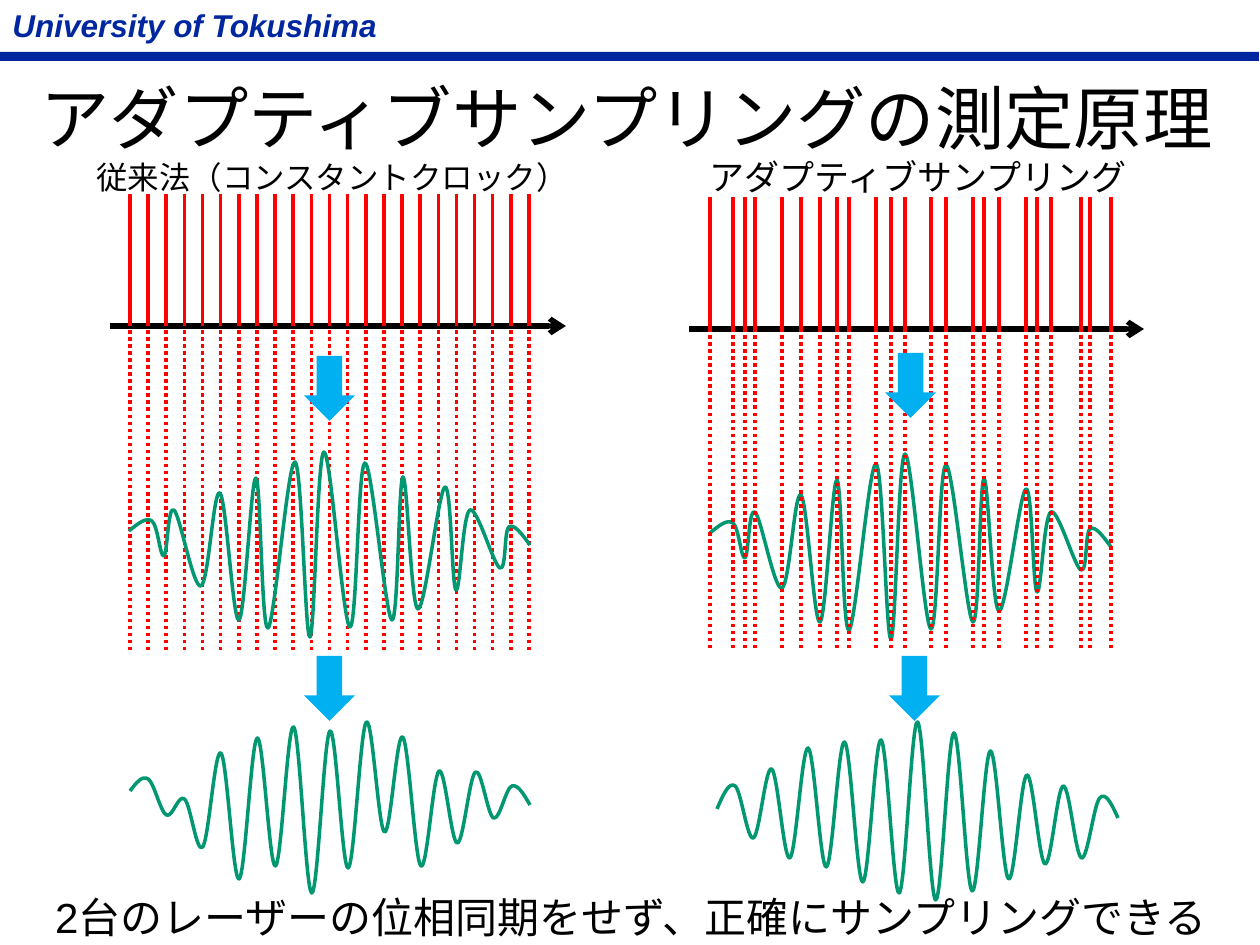
from lxml import etree
from pptx import Presentation
from pptx.dml.color import RGBColor
from pptx.enum.dml import MSO_LINE
from pptx.enum.shapes import MSO_CONNECTOR, MSO_SHAPE
from pptx.enum.text import MSO_ANCHOR, MSO_AUTO_SIZE, PP_ALIGN
from pptx.oxml.ns import qn
from pptx.util import Emu, Inches, Pt

PX = 914400 / 126
FONT = "Arial"
NAVY = RGBColor(0x00, 0x27, 0x9F)
BLACK = RGBColor(0x00, 0x00, 0x00)
RED = RGBColor(0xFF, 0x00, 0x00)
GREEN = RGBColor(0x00, 0x97, 0x71)
SKY = RGBColor(0x00, 0xB0, 0xF0)
STRAIGHT = MSO_CONNECTOR.STRAIGHT
RECTANGLE = MSO_SHAPE.RECTANGLE
RIGHT_ARROW = MSO_SHAPE.RIGHT_ARROW
DOTTED = MSO_LINE.ROUND_DOT
CENTER = PP_ALIGN.CENTER
LEFT = PP_ALIGN.LEFT
MIDDLE = MSO_ANCHOR.MIDDLE
FIXED_SIZE = MSO_AUTO_SIZE.NONE

SAMPLES = 23
BEAT_ADAPTIVE = [
    (710, 533), (733, 523), (745, 558), (755, 512), (782, 588), (801, 495),
    (820, 622), (837, 480), (849, 630), (876, 464), (891, 639), (905, 454),
    (931, 629), (946, 465), (973, 622), (984, 479), (999, 611), (1026, 489),
    (1037, 592), (1051, 512), (1081, 570), (1090, 529), (1111, 547)]
BEAT_CONSTANT = [(x - 581, y - 2) for x, y in BEAT_ADAPTIVE]
SAMPLED_CONSTANT = [791, 779, 815, 799, 847, 753, 879, 738, 866, 727, 893, 731,
                    868, 722, 832, 737, 866, 771, 843, 772, 818, 786, 805]
SAMPLED_ADAPTIVE = [809, 786, 838, 769, 858, 748, 867, 742, 882, 740, 893, 722,
                    900, 733, 891, 751, 879, 775, 864, 786, 858, 798, 818]


def px(*lengths):
    return [Emu(round(length * PX)) for length in lengths]


def evenly(first, last):
    """Spread the sample positions evenly from first to last."""
    return [first + (last - first) * i / (SAMPLES - 1) for i in range(SAMPLES)]


def write(frame, text, size, color=BLACK, align=CENTER):
    paragraph = frame.paragraphs[0]
    paragraph.alignment = align
    run = paragraph.add_run()
    run.text = text
    run.font.name = FONT
    run.font.size = Pt(size)
    run.font.color.rgb = color
    return run


def add_title(slide, text):
    title = slide.shapes.title
    title.left, title.top, title.width, title.height = px(-5, 58, 1263, 117)
    title.text_frame.auto_size = FIXED_SIZE
    title.text_frame.vertical_anchor = MIDDLE
    write(title.text_frame, text, 39.6)


def add_label(slide, box, text, size, color=BLACK, align=CENTER):
    frame = slide.shapes.add_textbox(*px(*box)).text_frame
    frame.word_wrap = True
    return write(frame, text, size, color, align)


def add_filled(slide, preset, box, color):
    shape = slide.shapes.add_shape(preset, *px(*box))
    shape.shadow.inherit = False
    shape.fill.solid()
    shape.fill.fore_color.rgb = color
    shape.line.fill.background()
    return shape


def add_header(slide):
    add_filled(slide, RECTANGLE, (0, 52, 1259, 9), NAVY)
    name = add_label(slide, (0, 0, 393, 50), "University of Tokushima", 18, NAVY, LEFT)
    name.font.bold = True
    name.font.italic = True


def add_step_arrow(slide, x, y):
    add_filled(slide, RIGHT_ARROW, (x, y, 65, 51), SKY).rotation = 90


def add_line(shapes, start, end, color, width):
    line = shapes.add_connector(STRAIGHT, *px(*start, *end))
    line.line.color.rgb = color
    line.line.width = Pt(width)
    etree.SubElement(line.element.spPr, qn("a:effectLst"))
    return line


def add_clock(slide, xs, top, axis_left, axis_right, axis_y):
    """Draw a time axis with one clock pulse at each x."""
    shapes = slide.shapes.add_group_shape().shapes
    axis = add_line(shapes, (axis_left, axis_y), (axis_right, axis_y), BLACK, 3)
    etree.SubElement(axis.line._get_or_add_ln(), qn("a:tailEnd"), type="arrow")
    for x in xs:
        add_line(shapes, (x, top), (x, axis_y), RED, 2)


def add_sampling_lines(slide, xs, top, bottom):
    shapes = slide.shapes.add_group_shape().shapes
    for x in xs:
        add_line(shapes, (x, top), (x, bottom), RED, 2).line.dash_style = DOTTED


def spline_controls(knots):
    """Give the two Bezier controls of each span of a Catmull-Rom spline."""
    def control(knot, before, after, sign):
        return tuple(k + sign * (a - b) / 6 for k, b, a in zip(knot, before, after))

    def midpoint(a, b):
        return tuple((p + q) / 2 for p, q in zip(a, b))

    last = len(knots) - 2
    controls = []
    for i, (start, end) in enumerate(zip(knots, knots[1:])):
        leaving = control(start, knots[max(i - 1, 0)], end, 1)
        arriving = control(end, start, knots[min(i + 2, last + 1)], -1)
        if i == 0:
            leaving = midpoint(start, arriving)
        elif i == last:
            arriving = midpoint(leaving, end)
        controls.append((leaving, arriving))
    return controls


def add_wave(slide, points):
    knots = [px(*point) for point in points]
    builder = slide.shapes.build_freeform(*knots[0])
    builder.add_line_segments(knots[1:], close=False)
    wave = builder.convert_to_shape()
    wave.shadow.inherit = False
    wave.fill.background()
    wave.line.color.rgb = GREEN
    wave.line.width = Pt(2)
    segments = list(wave.element.iter(qn("a:lnTo")))
    for segment, controls, end in zip(segments, spline_controls(knots), knots[1:]):
        curve = etree.Element(qn("a:cubicBezTo"))
        for x, y in (*controls, end):
            etree.SubElement(curve, qn("a:pt"), x=str(round(x - wave.left)),
                             y=str(round(y - wave.top)))
        segment.getparent().replace(segment, curve)


def main():
    prs = Presentation()
    prs.slide_width, prs.slide_height = Inches(10), Inches(7.5)
    slide = prs.slides.add_slide(prs.slide_layouts[5])
    add_header(slide)
    add_title(slide, "アダプティブサンプリングの測定原理")
    add_label(slide, (14, 885, 1234, 63),
              "2台のレーザーの位相同期をせず、正確にサンプリングできる", 24)

    constant_xs = evenly(130, 529)
    add_clock(slide, constant_xs, 194, 110, 566, 326)
    add_label(slide, (64, 152, 536, 50), "従来法（コンスタントクロック）", 18)
    add_sampling_lines(slide, constant_xs, 330, 650)
    add_step_arrow(slide, 297, 363)
    add_wave(slide, BEAT_CONSTANT)
    add_step_arrow(slide, 297, 663)
    add_wave(slide, list(zip(evenly(130, 530), SAMPLED_CONSTANT)))

    adaptive_xs = [x for x, _ in BEAT_ADAPTIVE]
    add_clock(slide, adaptive_xs, 197, 689, 1144, 329)
    add_label(slide, (685, 149, 466, 55), "アダプティブサンプリング", 20)
    add_wave(slide, BEAT_ADAPTIVE)
    add_sampling_lines(slide, adaptive_xs, 321, 648)
    add_step_arrow(slide, 878, 360)
    add_step_arrow(slide, 882, 663)
    add_wave(slide, list(zip(evenly(717, 1118), SAMPLED_ADAPTIVE)))
    prs.save("out.pptx")


if __name__ == "__main__":
    main()
